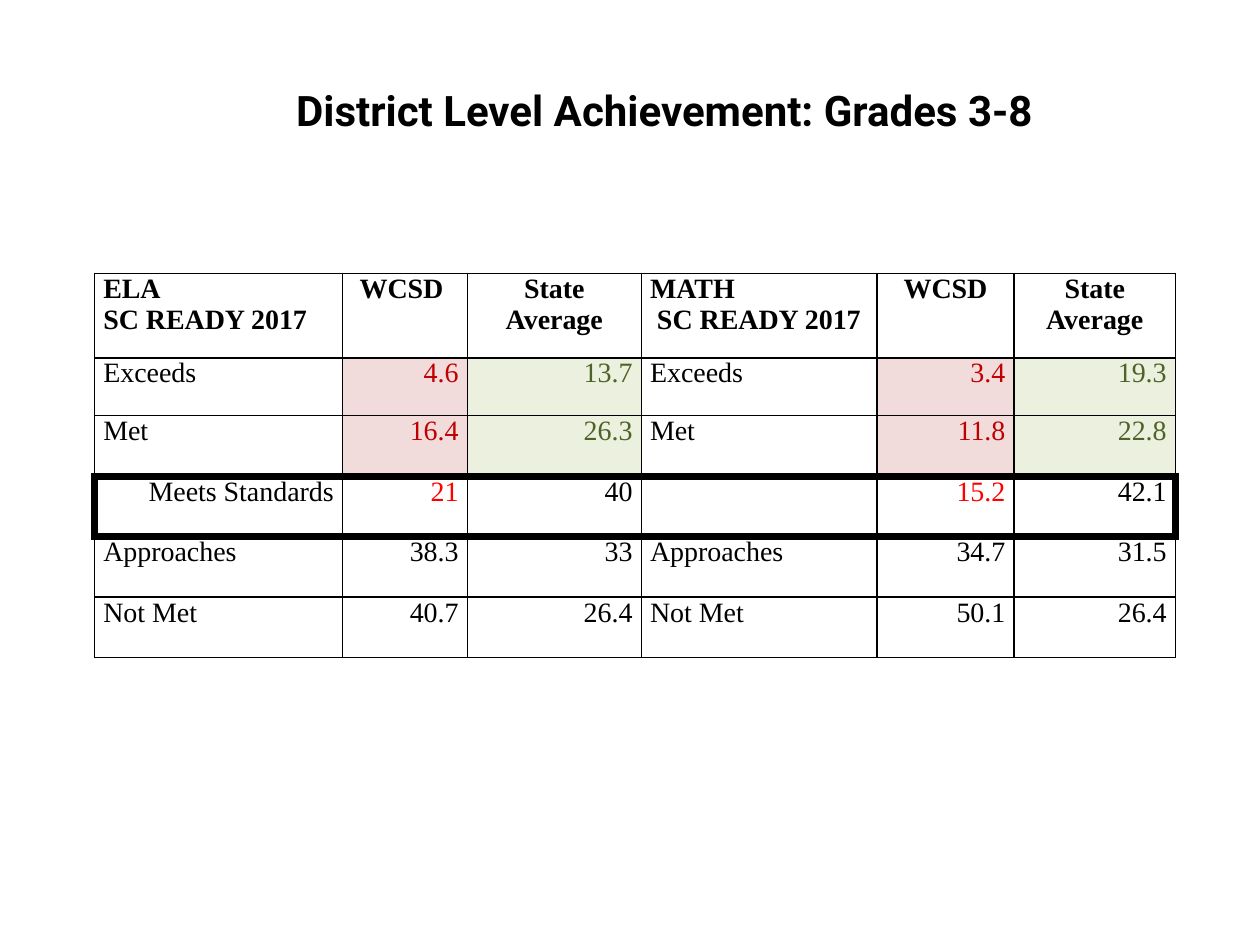
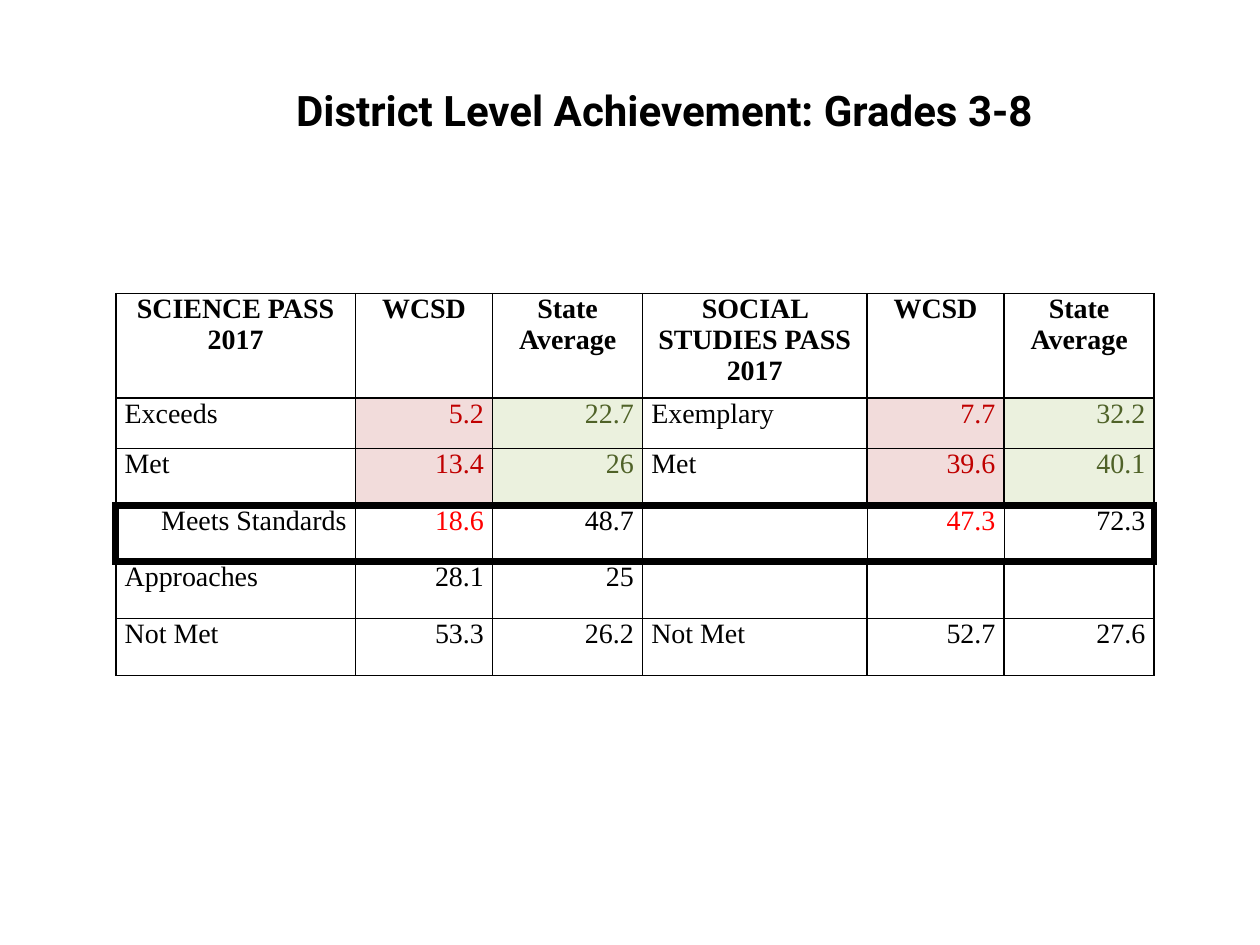
"""Build two slides that compare district and state achievement levels."""
from dataclasses import dataclass

from lxml.etree import SubElement
from pptx import Presentation
from pptx.dml.color import RGBColor
from pptx.enum.text import MSO_ANCHOR, MSO_AUTO_SIZE, PP_ALIGN
from pptx.oxml.ns import qn
from pptx.util import Inches, Pt

BLACK, WHITE = "000000", "FFFFFF"
RED, DARK_RED, PINK = "FF0000", "C00000", "F2DCDB"
GREEN, PALE = "4F6228", "EBF1DE"
TITLE = "District Level Achievement: Grades 3-8"
HEAD, KEY = 0, 3
THIN, THICK = 1, 4.5


@dataclass
class Report:
    left: float
    top: float
    cols: list[float]
    rows: list[float]
    align: PP_ALIGN
    inner: float
    cells: list[list[str]]


REPORTS = [
    Report(
        0.75, 2.17,
        [1.97, 0.99, 1.38, 1.87, 1.09, 1.28],
        [0.67, 0.46] + [0.48] * 4,
        PP_ALIGN.LEFT, THIN,
        [
            ["ELA\nSC READY 2017", "WCSD ", "State Average",
             "MATH\n SC READY 2017", "WCSD", "State Average"],
            ["Exceeds", "4.6", "13.7", "Exceeds", "3.4", "19.3"],
            ["Met", "16.4", "26.3", "Met", "11.8", "22.8"],
            ["Meets Standards", "21", "40", "", "15.2", "42.1"],
            ["Approaches", "38.3", "33", "Approaches", "34.7", "31.5"],
            ["Not Met", "40.7", "26.4", "Not Met", "50.1", "26.4"],
        ],
    ),
    Report(
        0.92, 2.33,
        [1.9, 1.09, 1.19, 1.78, 1.09, 1.19],
        [0.83, 0.4] + [0.45] * 4,
        PP_ALIGN.CENTER, 0.25,
        [
            ["SCIENCE PASS 2017", "WCSD", "State Average",
             "SOCIAL STUDIES PASS 2017", "WCSD", "State Average"],
            ["Exceeds", "5.2", "22.7", "Exemplary", "7.7", "32.2"],
            ["Met", "13.4", "26", "Met", "39.6", "40.1"],
            ["Meets Standards", "18.6", "48.7", "", "47.3", "72.3"],
            ["Approaches", "28.1", "25", "", "", ""],
            ["Not Met", "53.3", "26.2", "Not Met", "52.7", "27.6"],
        ],
    ),
]


def color(code: str) -> RGBColor:
    """Turn a hex string into a colour."""
    return RGBColor.from_string(code)


def style(frame, font: str, size: float, code: str, bold: bool, align: PP_ALIGN) -> None:
    """Format every paragraph of a text frame."""
    for para in frame.paragraphs:
        para.alignment = align
        for run in para.runs:
            run.font.name = font
            run.font.size = Pt(size)
            run.font.bold = bold
            run.font.color.rgb = color(code)


def add_title(slide) -> None:
    """Place and format the shared slide title."""
    title = slide.shapes.title
    title.left, title.top = Inches(2.25), Inches(0.5)
    title.width, title.height = Inches(7.17), Inches(0.62)
    frame = title.text_frame
    frame.text = TITLE
    frame.auto_size = MSO_AUTO_SIZE.NONE
    frame.vertical_anchor = MSO_ANCHOR.BOTTOM
    style(frame, "Roboto", 24, BLACK, True, PP_ALIGN.LEFT)


def tint(row: int, col: int) -> tuple[str, str]:
    """Give the text and fill colours of a cell."""
    kind = col % 3
    if row in (1, 2) and kind:
        return (DARK_RED, PINK) if kind == 1 else (GREEN, PALE)
    return (RED if row == KEY and kind == 1 else BLACK), WHITE


def place(report: Report, row: int, col: int) -> PP_ALIGN:
    """Give the alignment of a cell."""
    if row == HEAD:
        return PP_ALIGN.CENTER if col % 3 else report.align
    return PP_ALIGN.RIGHT if col % 3 or row == KEY else PP_ALIGN.LEFT


def edges(report: Report, row: int, col: int) -> dict[str, float]:
    """Give the border widths, with a thick frame round the key row."""
    side = report.inner if row == KEY else THIN
    last = len(report.cols) - 1
    return {
        "a:lnL": THICK if row == KEY and col == 0 else side,
        "a:lnR": THICK if row == KEY and col == last else side,
        "a:lnT": THICK if row in (KEY, KEY + 1) else THIN,
        "a:lnB": THICK if row in (KEY - 1, KEY) else THIN,
    }


def border(cell, widths: dict[str, float]) -> None:
    """Draw the four borders of a cell."""
    props = cell._tc.get_or_add_tcPr()
    for index, (tag, width) in enumerate(widths.items()):
        line = SubElement(props, qn(tag), w=str(Pt(width)))
        fill = SubElement(line, qn("a:solidFill"))
        SubElement(fill, qn("a:srgbClr"), val=BLACK)
        props.insert(index, line)


def add_grid(slide, report: Report) -> None:
    """Add the table of one report."""
    table = slide.shapes.add_table(
        len(report.rows), len(report.cols), Inches(report.left), Inches(report.top),
        Inches(sum(report.cols)), Inches(sum(report.rows))).table
    table.first_row = table.horz_banding = False
    for col, width in enumerate(report.cols):
        table.columns[col].width = Inches(width)
    for row, height in enumerate(report.rows):
        table.rows[row].height = Inches(height)
        for col, text in enumerate(report.cells[row]):
            cell = table.cell(row, col)
            cell.margin_left = cell.margin_right = Inches(0.07)
            cell.margin_top = cell.margin_bottom = 0
            ink, fill = tint(row, col)
            cell.fill.solid()
            cell.fill.fore_color.rgb = color(fill)
            cell.text_frame.text = text
            style(cell.text_frame, "Times New Roman", 16, ink, row == HEAD,
                  place(report, row, col))
            border(cell, edges(report, row, col))


def main() -> None:
    """Build and save the slides."""
    deck = Presentation()
    deck.slide_width, deck.slide_height = Inches(10), Inches(7.5)
    layout = deck.slide_layouts.get_by_name("Title Only")
    for report in REPORTS:
        slide = deck.slides.add_slide(layout)
        add_title(slide)
        add_grid(slide, report)
    deck.save("out.pptx")


if __name__ == "__main__":
    main()
